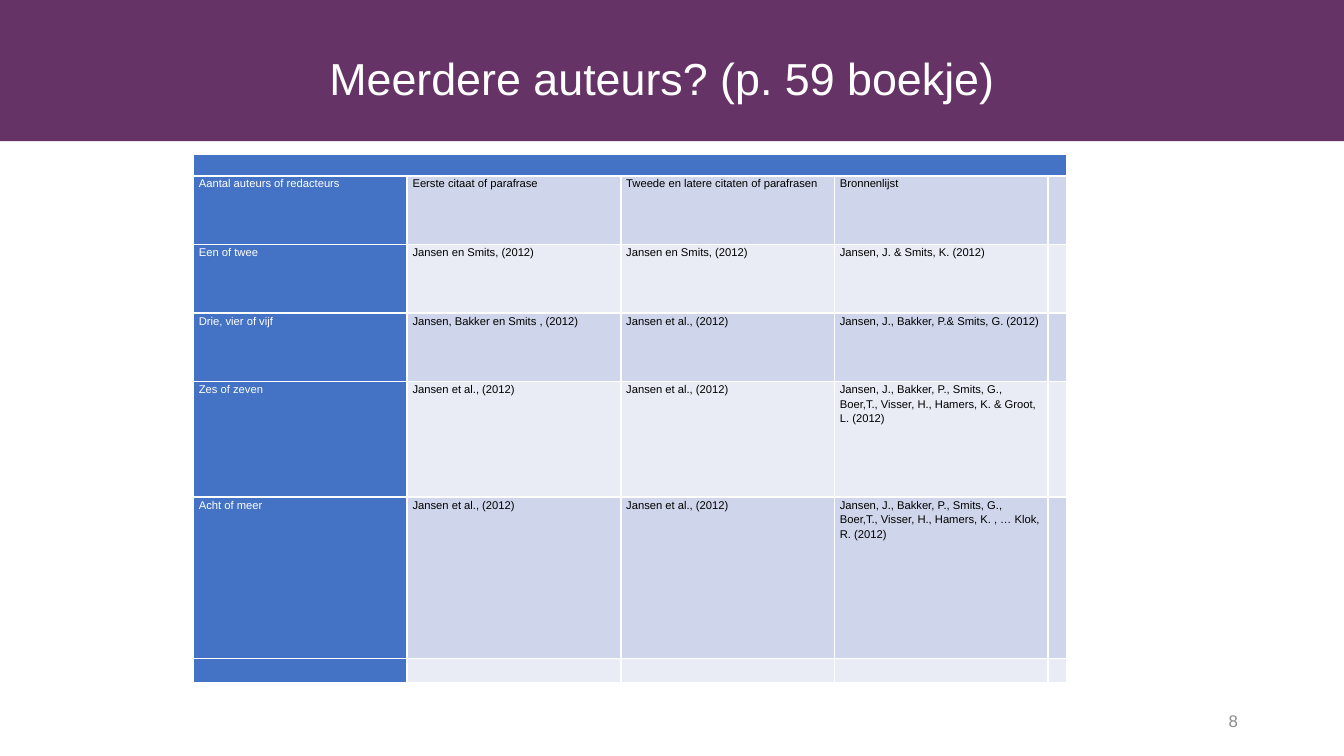
"""Build the slide that shows how to cite sources with several authors."""
from dataclasses import dataclass

from lxml import etree
from pptx import Presentation
from pptx import util as u
from pptx.dml.color import RGBColor
from pptx.enum import shapes, text
from pptx.oxml.ns import qn


@dataclass(frozen=True)
class Theme:
    font: str = "Arial"
    banner: str = "663366"
    white: str = "FFFFFF"
    black: str = "000000"
    label: str = "4472C4"
    bands: tuple = ("E9EBF5", "CFD5EA")
    muted: str = "8C8C8C"
    title_size: float = 24
    cell_size: float = 6
    number_size: float = 9
    line: float = 1


@dataclass(frozen=True)
class Label:
    text: str
    left: float
    top: float
    width: float
    height: float
    size: float
    color: str
    align: text.PP_ALIGN
    indent: float = 0.1
    spacing: float = 1.0


@dataclass(frozen=True)
class Rule:
    authors: str
    first: str
    later: str
    source: str
    height: float


THEME = Theme()
LABELS = (
    Label("Meerdere auteurs? (p. 59 boekje)", 0.76, 0.19, 7.32, 0.82,
          THEME.title_size, THEME.white, text.PP_ALIGN.LEFT, 1.69, 0.9),
    Label("8", 7.06, 5.21, 2.25, 0.3,
          THEME.number_size, THEME.muted, text.PP_ALIGN.RIGHT),
)
SHORT = "Jansen et al., (2012)"
PAIR = "Jansen en Smits, (2012)"
SEVEN = "Jansen, J., Bakker, P., Smits, G., Boer,T., Visser, H., Hamers, K. "
RULES = (
    Rule("", "", "", "", 0.16),
    Rule("Aantal auteurs of redacteurs", "Eerste citaat of parafrase",
         "Tweede en latere citaten of parafrasen", "Bronnenlijst", 0.51),
    Rule("Een of twee", PAIR, PAIR, "Jansen, J. & Smits, K. (2012)", 0.51),
    Rule("Drie, vier of vijf", "Jansen, Bakker en Smits , (2012)", SHORT,
         "Jansen, J., Bakker, P.& Smits, G. (2012)", 0.51),
    Rule("Zes of zeven", SHORT, SHORT, SEVEN + "& Groot, L. (2012)", 0.86),
    Rule("Acht of meer", SHORT, SHORT, SEVEN + ", … Klok, R. (2012)", 1.2),
    Rule("", "", "", "", 0.18),
)
COLUMNS = (1.59, 1.59, 1.59, 1.59, 0.14)


def style_font(font, size: float, color: str) -> None:
    """Give a font its face, size and colour."""
    font.name = THEME.font
    font.size = u.Pt(size)
    font.color.rgb = RGBColor.from_string(color)


def draw_banner(page, width: float, height: float) -> None:
    """Draw the coloured band along the top."""
    banner = page.shapes.add_shape(shapes.MSO_SHAPE.RECTANGLE, 0, 0,
                                   u.Inches(width), u.Inches(height))
    banner.shadow.inherit = False
    banner.fill.solid()
    banner.fill.fore_color.rgb = RGBColor.from_string(THEME.banner)
    banner.line.fill.background()


def draw_label(page, label: Label) -> None:
    """Draw one line of text in a vertically centred box."""
    box = page.shapes.add_textbox(*map(u.Inches, (label.left, label.top,
                                                  label.width, label.height)))
    frame = box.text_frame
    frame.word_wrap = True
    frame.vertical_anchor = text.MSO_ANCHOR.MIDDLE
    frame.margin_left = u.Inches(label.indent)
    frame.text = label.text
    para = frame.paragraphs[0]
    para.alignment = label.align
    para.line_spacing = label.spacing
    style_font(para.runs[0].font, label.size, label.color)


def add_border(cell, side: str) -> None:
    """Add a white border on one side of a cell."""
    properties = cell._tc.get_or_add_tcPr()
    line = etree.SubElement(properties, qn(f"a:ln{side}"),
                            w=str(u.Pt(THEME.line)))
    fill = etree.SubElement(line, qn("a:solidFill"))
    etree.SubElement(fill, qn("a:srgbClr"), val=THEME.white)


def fill_cell(cell, words: str, fill: str, color: str) -> None:
    """Set the borders, fill and text of one cell."""
    for side in "LRTB":
        add_border(cell, side)
    cell.fill.solid()
    cell.fill.fore_color.rgb = RGBColor.from_string(fill)
    cell.margin_left = cell.margin_right = u.Inches(0.04)
    cell.margin_top = cell.margin_bottom = 0
    cell.text_frame.text = words
    para = cell.text_frame.paragraphs[0]
    para.line_spacing = 1.15
    for span in para.runs:
        style_font(span.font, THEME.cell_size, color)
    if not words:
        ending = para._p.get_or_add_endParaRPr()
        ending.set("sz", str(int(THEME.cell_size * 100)))


def draw_table(page, left: float, top: float) -> None:
    """Draw the citation rules with a label column and banded rows."""
    height = sum(rule.height for rule in RULES)
    frame = page.shapes.add_table(len(RULES), len(COLUMNS), u.Inches(left),
                                  u.Inches(top), u.Inches(sum(COLUMNS)),
                                  u.Inches(height))
    table = frame.table
    table.first_row = table.horz_banding = False
    for column, width in zip(table.columns, COLUMNS):
        column.width = u.Inches(width)
    for row, rule in enumerate(RULES):
        table.rows[row].height = u.Inches(rule.height)
        words = (rule.authors, rule.first, rule.later, rule.source, "")
        for column, content in enumerate(words):
            labelled = row == 0 or column == 0
            fill_cell(table.cell(row, column), content,
                      THEME.label if labelled else THEME.bands[row % 2],
                      THEME.white if labelled else THEME.black)
    table.cell(0, 0).merge(table.cell(0, len(COLUMNS) - 1))


def main() -> None:
    """Build and save the deck."""
    deck = Presentation()
    deck.slide_width = u.Inches(10)
    deck.slide_height = u.Inches(10 * 9 / 16)
    page = deck.slides.add_slide(deck.slide_layouts[6])
    draw_banner(page, 10, 1.05)
    draw_table(page, 1.44, 1.15)
    for label in LABELS:
        draw_label(page, label)
    deck.save("out.pptx")


if __name__ == "__main__":
    main()
